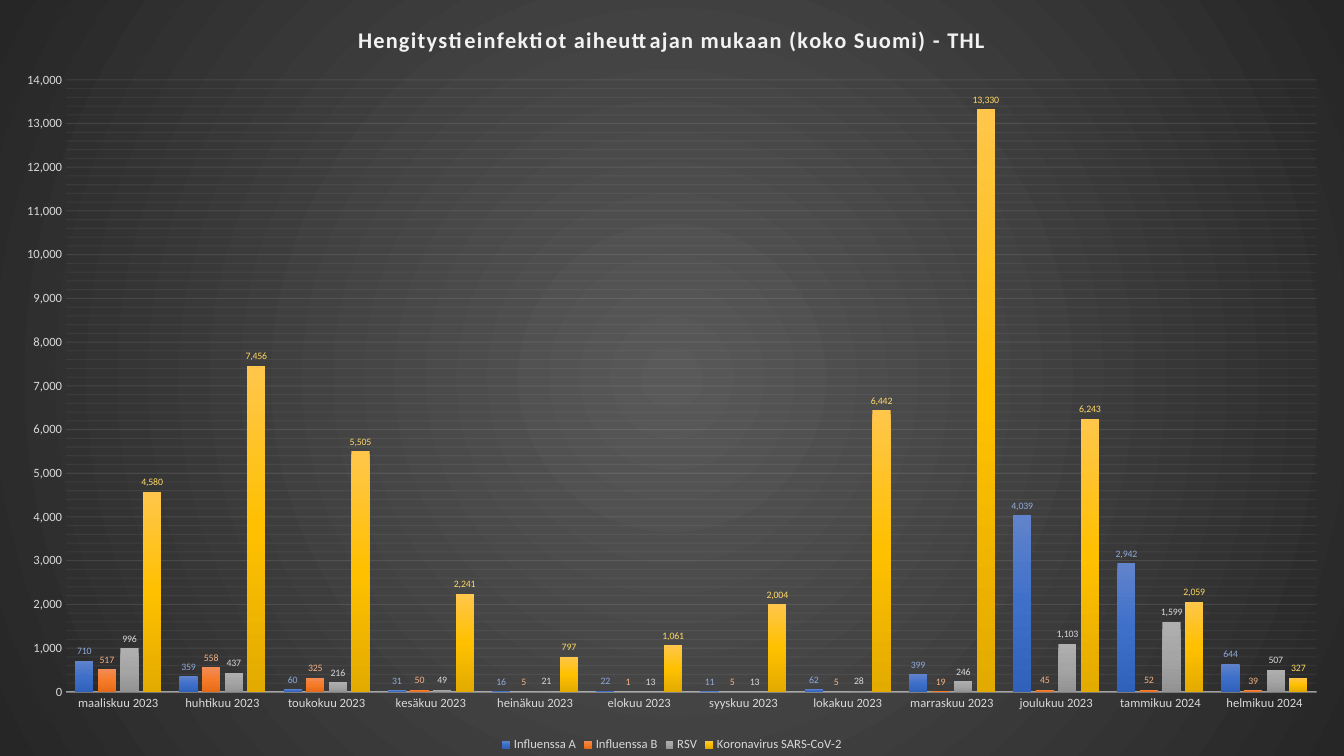
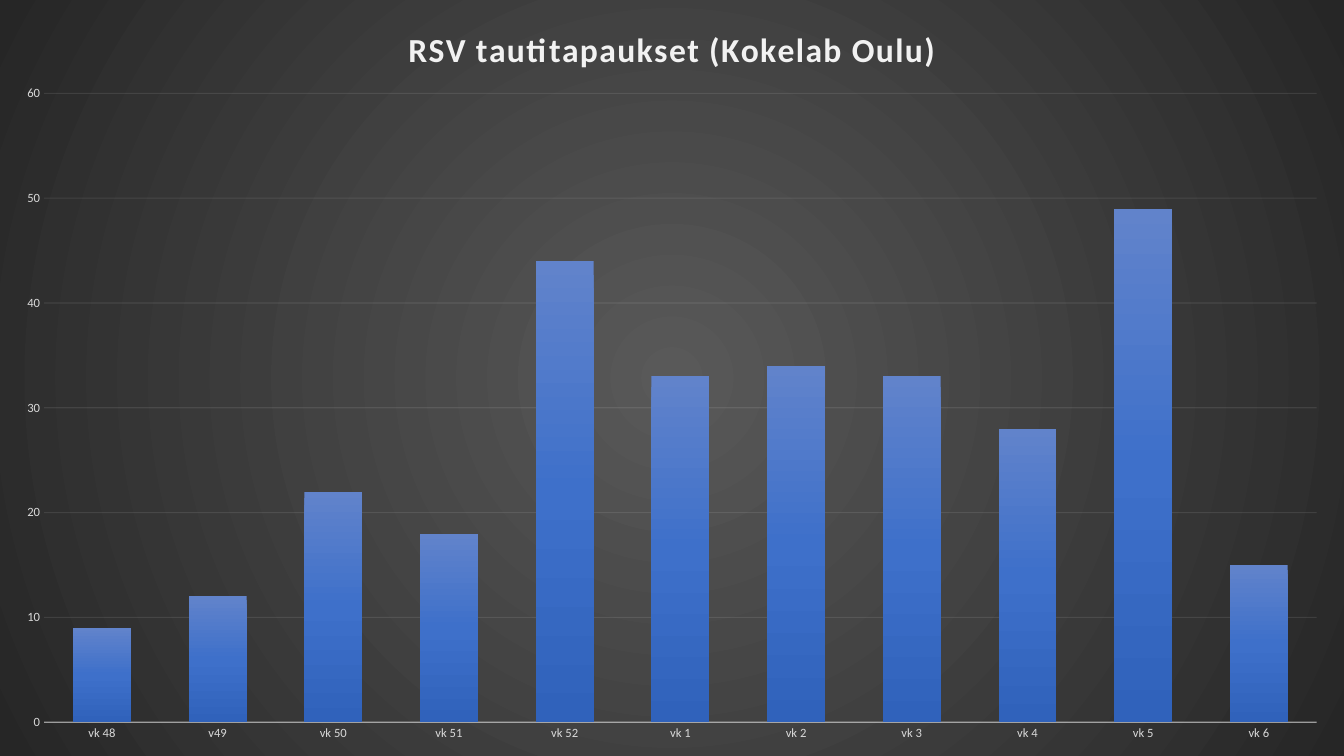
import copy

import pptx
import pptx.chart.data
import pptx.dml.color
import pptx.enum.chart
import pptx.oxml
import pptx.oxml.ns
import pptx.util

RGB = pptx.dml.color.RGBColor
qn = pptx.oxml.ns.qn
Pt = pptx.util.Pt

# Shared look
PX = 9525
WIDTH, HEIGHT = 1280 * PX, 720 * PX
FONT = "Calibri"
BLACK = RGB(0x00, 0x00, 0x00)
WHITE = RGB(0xFF, 0xFF, 0xFF)
TITLE_COLOR = LINE_COLOR = RGB(0xF2, 0xF2, 0xF2)
AXIS_TEXT = RGB(0xD9, 0xD9, 0xD9)
BACKDROP = [(0, RGB(0x59, 0x59, 0x59)), (100, RGB(0x26, 0x26, 0x26))]
RADIAL = '<a:path path="circle"><a:fillToRect l="50000" t="50000" r="50000" b="50000"/></a:path>'
VERTICAL = '<a:lin ang="5400000" scaled="0"/>'
BLUE = [RGB(0x61, 0x83, 0xCB), RGB(0x3E, 0x70, 0xCA), RGB(0x30, 0x62, 0xBB)]
ORANGE = [RGB(0xF1, 0x8C, 0x57), RGB(0xF6, 0x7B, 0x28), RGB(0xE5, 0x6C, 0x19)]
GRAY = [RGB(0xAF, 0xAF, 0xAF), RGB(0xA5, 0xA5, 0xA5), RGB(0x93, 0x93, 0x93)]
GOLD = [RGB(0xFF, 0xC6, 0x4B), RGB(0xFF, 0xC0, 0x00), RGB(0xE3, 0xAB, 0x00)]

# Content: series are (name, values, bar gradient, label colour);
# plot is left, top, right, bottom in px
CHARTS = [
    {
        "title": "Hengitystieinfektiot aiheuttajan mukaan (koko Suomi) - THL",
        "title_size": 16,
        "plot": (63, 76, 1254, 659),
        "maximum": 14000, "major": 1000, "minor": 200,
        "format": "#,##0", "legend": True,
        "categories": [
            "maaliskuu 2023", "huhtikuu 2023", "toukokuu 2023", "kesäkuu 2023",
            "heinäkuu 2023", "elokuu 2023", "syyskuu 2023", "lokakuu 2023",
            "marraskuu 2023", "joulukuu 2023", "tammikuu 2024", "helmikuu 2024"],
        "series": [
            ("Influenssa A", [710, 359, 60, 31, 16, 22, 11, 62, 399, 4039, 2942, 644],
             BLUE, RGB(0x8F, 0xAA, 0xDC)),
            ("Influenssa B", [517, 558, 325, 50, 5, 1, 5, 5, 19, 45, 52, 39],
             ORANGE, RGB(0xF4, 0xB1, 0x83)),
            ("RSV", [996, 437, 216, 49, 21, 13, 13, 28, 246, 1103, 1599, 507],
             GRAY, AXIS_TEXT),
            ("Koronavirus SARS-CoV-2",
             [4580, 7456, 5505, 2241, 797, 1061, 2004, 6442, 13330, 6243, 2059, 327],
             GOLD, RGB(0xFF, 0xD9, 0x66)),
        ],
    },
    {
        "title": "RSV tautitapaukset (Kokelab Oulu)",
        "title_size": 24,
        "plot": (42, 89, 1254, 688),
        "maximum": 60, "major": 10, "minor": None,
        "format": "General", "legend": False,
        "categories": ["vk 48", "v49", "vk 50", "vk 51", "vk 52", "vk 1",
                       "vk 2", "vk 3", "vk 4", "vk 5", "vk 6"],
        "series": [("Series 1", [9, 12, 22, 18, 44, 33, 34, 33, 28, 49, 15], BLUE, None)],
    },
]


def gradient(stops, direction):
    marks = "".join(f'<a:gs pos="{position * 1000}"><a:srgbClr val="{color}"/></a:gs>'
                    for position, color in stops)
    return (f'<a:gradFill {pptx.oxml.ns.nsdecls("a")} rotWithShape="1">'
            f"<a:gsLst>{marks}</a:gsLst>{direction}</a:gradFill>")


def style_font(font, size, color, bold=False):
    font.name, font.size, font.bold = FONT, Pt(size), bold
    font.color.rgb = color


def style_line(line, width, opacity):
    line.width = Pt(width)
    line.color.rgb = LINE_COLOR
    color = line.fill._xPr.find(".//" + qn("a:srgbClr"))
    color.append(pptx.oxml.parse_xml(
        f'<a:alpha {pptx.oxml.ns.nsdecls("a")} val="{opacity * 1000}"/>'))


def paint_backdrop(chart):
    chart.element.find(qn("c:chart")).addnext(pptx.oxml.parse_xml(
        f'<c:spPr {pptx.oxml.ns.nsdecls("c", "a")}>{gradient(BACKDROP, RADIAL)}'
        "<a:ln><a:noFill/></a:ln></c:spPr>"))


def place_plot(chart, left, top, right, bottom):
    area = chart.element.find(".//" + qn("c:plotArea"))
    for layout in area.findall(qn("c:layout")):
        area.remove(layout)
    shares = {"x": left * PX / WIDTH, "y": top * PX / HEIGHT,
              "w": (right - left) * PX / WIDTH, "h": (bottom - top) * PX / HEIGHT}
    modes = '<c:layoutTarget val="inner"/><c:xMode val="edge"/><c:yMode val="edge"/>'
    sizes = "".join(f'<c:{key} val="{share:.4f}"/>' for key, share in shares.items())
    area.insert(0, pptx.oxml.parse_xml(
        f'<c:layout {pptx.oxml.ns.nsdecls("c")}><c:manualLayout>{modes}{sizes}'
        "</c:manualLayout></c:layout>"))


def add_title(chart, text, size):
    chart.has_title = True
    para = chart.chart_title.text_frame.paragraphs[0]
    para.text = text
    span = para.runs[0]
    style_font(span.font, size, TITLE_COLOR, bold=True)
    span.font._element.set("spc", "100")


def add_minor_gridlines(axis, step):
    """Repeat the major gridline style at half its opacity."""
    axis.minor_unit = step
    axis.has_minor_gridlines = True
    major = axis._element.find(qn("c:majorGridlines"))
    minor = axis._element.find(qn("c:minorGridlines"))
    minor.append(copy.deepcopy(major.find(qn("c:spPr"))))
    minor.find(".//" + qn("a:alpha")).set("val", "5000")


def style_axes(chart, content):
    for axis in (chart.category_axis, chart.value_axis):
        axis.major_tick_mark = axis.minor_tick_mark = pptx.enum.chart.XL_TICK_MARK.NONE
        style_font(axis.tick_labels.font, 9, AXIS_TEXT)
    style_line(chart.category_axis.format.line, 1, 54)
    values = chart.value_axis
    values.format.line.fill.background()
    values.minimum_scale, values.maximum_scale = 0, content["maximum"]
    values.major_unit = content["major"]
    values.tick_labels.number_format = content["format"]
    values.tick_labels.number_format_is_linked = False
    style_line(values.major_gridlines.format.line, 0.75, 10)
    if content["minor"]:
        add_minor_gridlines(values, content["minor"])


def style_series(series, colors, label_color, number_format):
    stops = zip((0, 50, 100), colors)
    series._element.get_or_add_spPr().append(
        pptx.oxml.parse_xml(gradient(stops, VERTICAL)))
    series.format.line.fill.background()
    if label_color is not None:
        labels = series.data_labels
        labels.show_value = True
        labels.position = pptx.enum.chart.XL_LABEL_POSITION.OUTSIDE_END
        labels.number_format = number_format
        labels.number_format_is_linked = False
        style_font(labels.font, 7, label_color)


def add_chart_slide(deck, content):
    page = deck.slides.add_slide(deck.slide_layouts[6])
    page.background.fill.solid()
    page.background.fill.fore_color.rgb = BLACK

    data = pptx.chart.data.CategoryChartData(number_format=content["format"])
    data.categories = content["categories"]
    for name, values, *_ in content["series"]:
        data.add_series(name, values)
    chart = page.shapes.add_chart(
        pptx.enum.chart.XL_CHART_TYPE.COLUMN_CLUSTERED, 0, 0, WIDTH, HEIGHT, data).chart

    style_font(chart.font, 10, WHITE)
    paint_backdrop(chart)
    add_title(chart, content["title"], content["title_size"])
    place_plot(chart, *content["plot"])
    style_axes(chart, content)

    # Bars
    plot = chart.plots[0]
    plot.gap_width, plot.overlap, plot.vary_by_categories = 100, -24, False
    for series, (_, _, colors, label_color) in zip(plot.series, content["series"]):
        style_series(series, colors, label_color, content["format"])

    # Legend
    chart.has_legend = content["legend"]
    if chart.has_legend:
        chart.legend.position = pptx.enum.chart.XL_LEGEND_POSITION.BOTTOM
        chart.legend.include_in_layout = False
        style_font(chart.legend.font, 9, AXIS_TEXT)


def main():
    deck = pptx.Presentation()
    deck.slide_width, deck.slide_height = WIDTH, HEIGHT
    for content in CHARTS:
        add_chart_slide(deck, content)
    deck.save("out.pptx")


if __name__ == "__main__":
    main()
